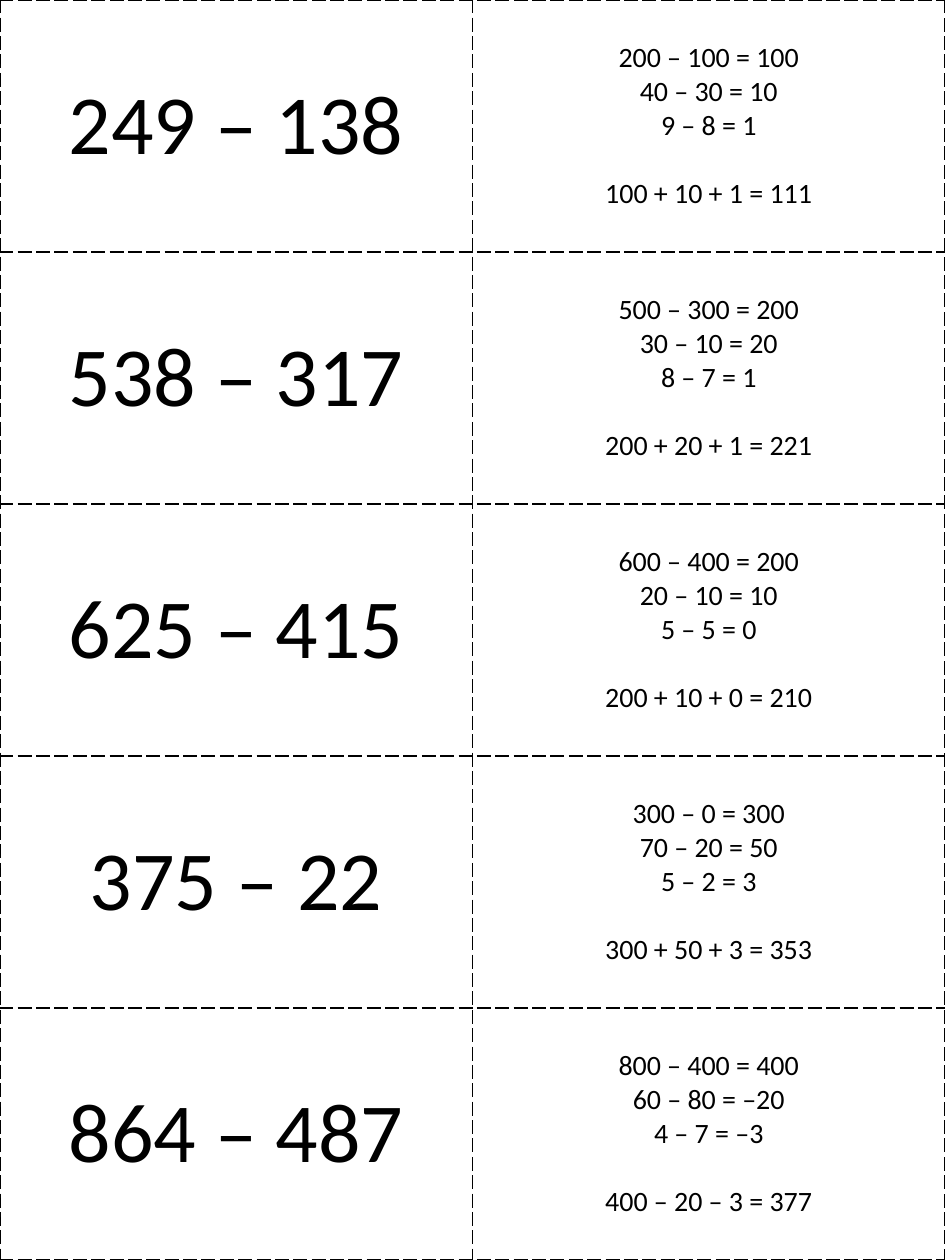
import pptx
import pptx.dml.color
import pptx.enum.text
import pptx.oxml
import pptx.oxml.ns
import pptx.util

PX = 914400 / 126
PAGE_WIDTH, PAGE_HEIGHT = 945, 1260
COLORS = {"ink": "000000"}
FONT = "Calibri"
QUESTION_SIZE, WORKING_SIZE = 48, 16
SUM_GAP = 19.5
CELL_FORMAT = {
    "vertical_anchor": pptx.enum.text.MSO_ANCHOR.MIDDLE,
    "margin_left": round(9 * PX),
    "margin_right": round(9 * PX),
    "margin_top": 0,
    "margin_bottom": 0,
}
TABLE_FORMAT = {"first_row": False, "horz_banding": False}

CARDS = [
    ("249 – 138", ["200 – 100 = 100", "40 – 30 = 10", "9 – 8 = 1"], "100 + 10 + 1 = 111"),
    ("538 – 317", ["500 – 300 = 200", "30 – 10 = 20", "8 – 7 = 1"], "200 + 20 + 1 = 221"),
    ("625 – 415", ["600 – 400 = 200", "20 – 10 = 10", "5 – 5 = 0"], "200 + 10 + 0 = 210"),
    ("375 – 22", ["300 – 0 = 300", "70 – 20 = 50", "5 – 2 = 3"], "300 + 50 + 3 = 353"),
    ("864 – 487", ["800 – 400 = 400", "60 – 80 = –20", "4 – 7 = –3"], "400 – 20 – 3 = 377"),
]


def emu(px):
    return round(px * PX)


def set_format(target, values):
    for name, value in values.items():
        setattr(target, name, value)


def add_cut_lines(cell):
    properties = cell._tc.get_or_add_tcPr()
    for side in "LRTB":
        properties.append(pptx.oxml.parse_xml(
            f'<a:ln{side} {pptx.oxml.ns.nsdecls("a")} w="12700">'
            f'<a:solidFill><a:srgbClr val="{COLORS["ink"]}"/></a:solidFill>'
            f'<a:prstDash val="lgDash"/></a:ln{side}>'))


def write_cell(cell, lines, size):
    set_format(cell, CELL_FORMAT)
    add_cut_lines(cell)
    cell.fill.background()
    cell.text = "\n".join(lines)
    for paragraph in cell.text_frame.paragraphs:
        paragraph.alignment = pptx.enum.text.PP_ALIGN.CENTER
        for run in paragraph.runs:
            set_format(run.font, {"name": FONT, "size": pptx.util.Pt(size), "bold": False})
            run.font.color.rgb = pptx.dml.color.RGBColor.from_string(COLORS["ink"])


def add_flash_cards(slide, left, top, width, height):
    table = slide.shapes.add_table(
        len(CARDS), 2, emu(left), emu(top), emu(width), emu(height)).table
    set_format(table, TABLE_FORMAT)
    for row, (question, steps, total) in zip(table.rows, CARDS):
        question_cell, working_cell = row.cells
        write_cell(question_cell, [question], QUESTION_SIZE)
        write_cell(working_cell, [*steps, total], WORKING_SIZE)
        working_cell.text_frame.paragraphs[-1].space_before = pptx.util.Pt(SUM_GAP)


def main():
    deck = pptx.Presentation()
    set_format(deck, {"slide_width": emu(PAGE_WIDTH), "slide_height": emu(PAGE_HEIGHT)})
    slide = deck.slides.add_slide(deck.slide_layouts[6])
    add_flash_cards(slide, 0, 0, PAGE_WIDTH, PAGE_HEIGHT)
    deck.save("out.pptx")


if __name__ == "__main__":
    main()
